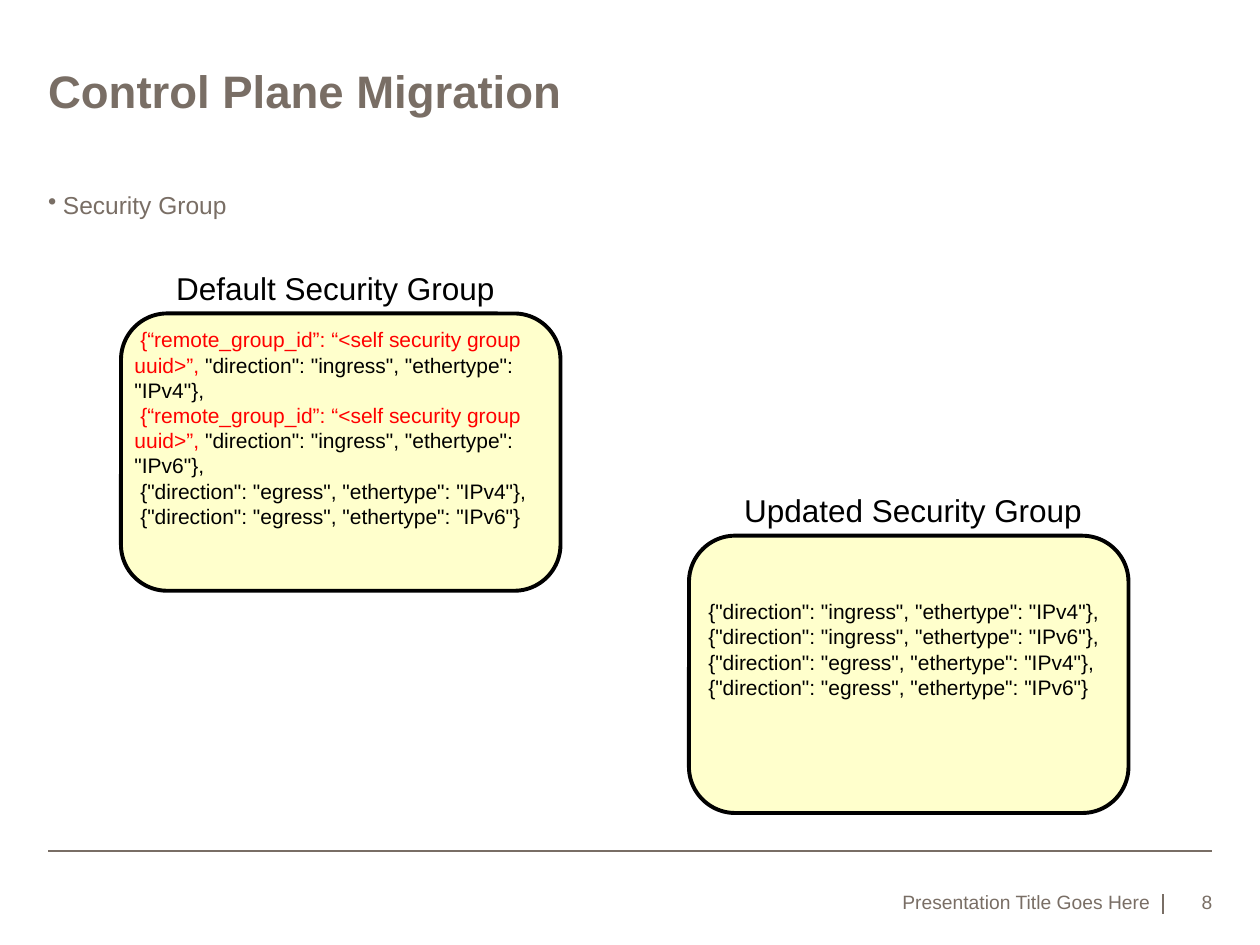
from lxml.etree import SubElement
from pptx import Presentation
from pptx.dml.color import RGBColor
from pptx.enum.shapes import MSO_CONNECTOR, MSO_SHAPE
from pptx.enum.text import MSO_ANCHOR, PP_ALIGN
from pptx.oxml.ns import qn
from pptx.util import Cm, Pt

INK = {"grey": "796E65", "black": "000000", "red": "FF0000", "cream": "FFFFCC"}
SELF = "{“remote_group_id”: “<self security group uuid>”, "
TEXTS = [
    ("Control Plane Migration", (0.97, 1.27, 23.47, 2.57), 26, "title"),
    ("Security Group", (0.97, 3.84, 23.47, 13.18), 14, "bullet"),
    ("Presentation Title Goes Here", (13.89, 17.7, 9.3, 0.71), 11, "foot"),
    ("8", (23.44, 17.72, 1.0, 0.69), 11, "foot"),
]
RULES = [(0.97, 17.15, 24.43, 17.15), (23.44, 18.03, 23.44, 18.42)]
GROUPS = [
    ("Default Security Group", 2.44, 6.32, 7.14, 0, [
        (SELF, '"direction": "ingress", "ethertype": "IPv4"},'),
        (SELF, '"direction": "ingress", "ethertype": "IPv6"},'),
        ("", '{"direction": "egress", "ethertype": "IPv4"},'),
        ("", '{"direction": "egress", "ethertype": "IPv6"}'),
    ]),
    ("Updated Security Group", 13.89, 10.8, 7.39, 1.0, [
        ("", '{"direction": "ingress", "ethertype": "IPv4"},'),
        ("", '{"direction": "ingress", "ethertype": "IPv6"},'),
        ("", '{"direction": "egress", "ethertype": "IPv4"},'),
        ("", '{"direction": "egress", "ethertype": "IPv6"}'),
    ]),
]
WIDE, HIGH = 8.86, 5.59


def tint(name):
    return RGBColor.from_string(INK[name])


def style(font, size, color="black", bold=False):
    font.name, font.size, font.bold = "Arial", Pt(size), bold
    font.color.rgb = tint(color)


def inset(frame, top=0):
    frame.word_wrap = True
    frame.margin_left = frame.margin_right = frame.margin_bottom = 0
    frame.margin_top = Cm(top)


def write(slide, text, area, size, kind):
    frame = slide.shapes.add_textbox(*map(Cm, area)).text_frame
    foot = kind == "foot"
    inset(frame, 0.13 if foot else 0)
    frame.vertical_anchor = MSO_ANCHOR.BOTTOM if foot else MSO_ANCHOR.TOP
    para = frame.paragraphs[0]
    para.text = text
    if foot:
        para.alignment = PP_ALIGN.RIGHT
    if kind == "bullet":
        props = para._p.get_or_add_pPr()
        props.set("marL", str(Cm(0.3)))
        props.set("indent", str(Cm(-0.3)))
        SubElement(props, qn("a:buChar"), char="•")
    style(para.font, size, "grey", kind == "title")


def rule(slide, ends):
    line = slide.shapes.add_connector(MSO_CONNECTOR.STRAIGHT, *map(Cm, ends))
    line.line.color.rgb, line.line.width = tint("grey"), Pt(1)
    SubElement(line._element.spPr, qn("a:effectLst"))


def group(slide, label, left, top, width, drop, rows):
    box = slide.shapes.add_shape(
        MSO_SHAPE.ROUNDED_RECTANGLE, Cm(left), Cm(top), Cm(WIDE), Cm(HIGH))
    box.shadow.inherit = False
    box.fill.solid()
    box.fill.fore_color.rgb = tint("cream")
    box.line.color.rgb, box.line.width = tint("black"), Pt(2.25)
    frame = box.text_frame
    inset(frame, drop)
    frame.vertical_anchor = MSO_ANCHOR.TOP
    for i, (old, rest) in enumerate(rows):
        para = frame.add_paragraph() if i else frame.paragraphs[0]
        para.alignment = PP_ALIGN.LEFT
        style(para.font, 12)
        if old:
            run = para.add_run()
            run.text = " " + old
            run.font.color.rgb = tint("red")
        para.add_run().text = rest if old else " " + rest
    head = slide.shapes.add_textbox(
        Cm(left + 0.86), Cm(top - 1.02), Cm(width), Cm(1.02)).text_frame
    head.word_wrap = True
    head.text = label
    style(head.paragraphs[0].font, 18)


def main():
    deck = Presentation()
    deck.slide_width, deck.slide_height = Cm(25.4), Cm(19.05)
    slide = deck.slides.add_slide(deck.slide_layouts[6])
    for ends in RULES:
        rule(slide, ends)
    for item in TEXTS:
        write(slide, *item)
    for item in GROUPS:
        group(slide, *item)
    deck.save("out.pptx")


if __name__ == "__main__":
    main()
